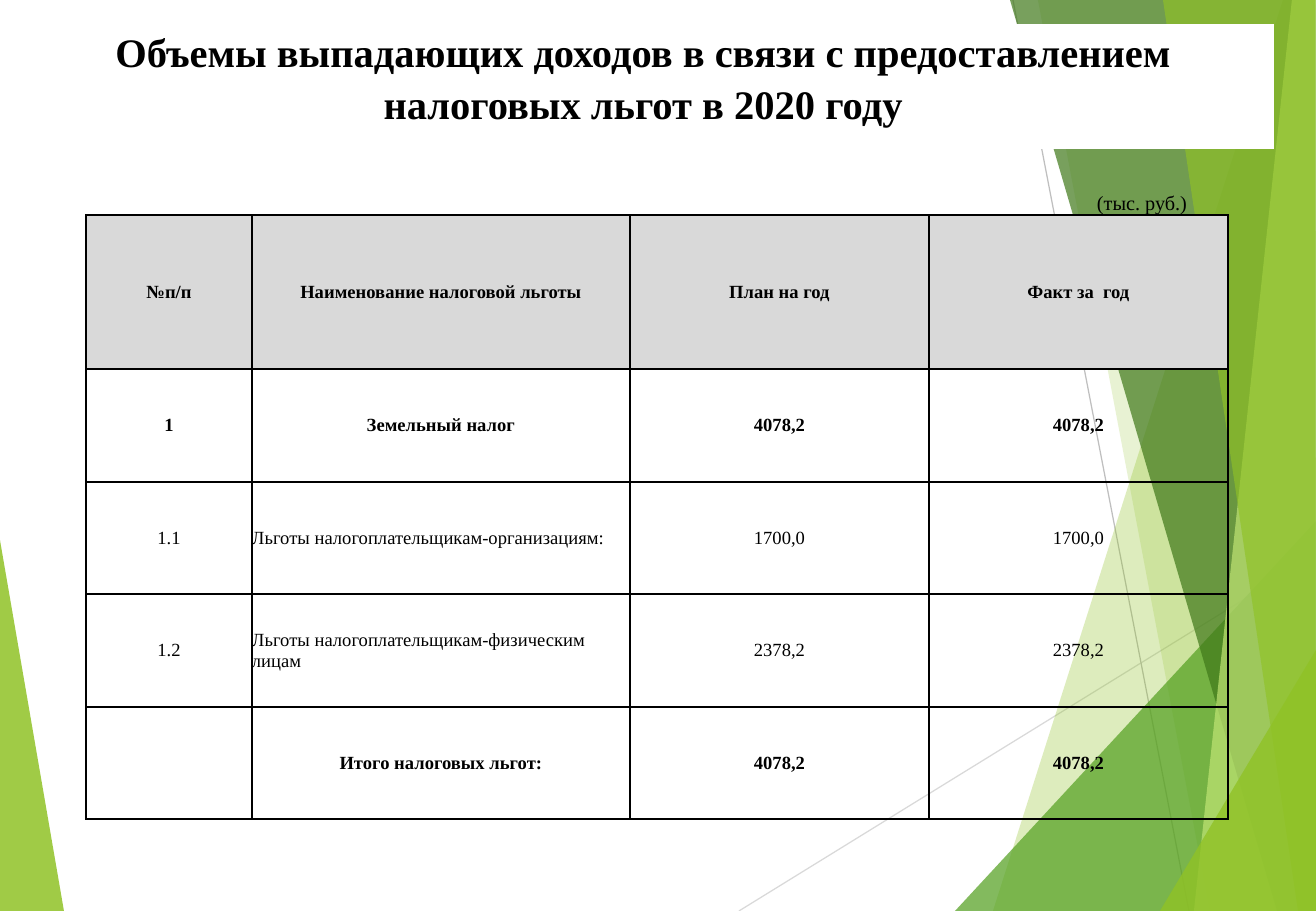
import pptx
import pptx.util
import pptx.dml.color
import pptx.enum.shapes
import pptx.enum.text
import pptx.oxml
import pptx.oxml.ns
import lxml.etree

PX = 7526
FONT = "Times New Roman"
ALIGN = pptx.enum.text.PP_ALIGN
ANCHOR = pptx.enum.text.MSO_ANCHOR


def color(value):
    return pptx.dml.color.RGBColor.from_string(value)


def write(frame, text, size=11, bold=False, align=ALIGN.CENTER, anchor=ANCHOR.TOP, wrap=True, spacing=1.0):
    frame.margin_left = frame.margin_right = frame.margin_top = frame.margin_bottom = 0
    frame.word_wrap = wrap
    frame.vertical_anchor = anchor
    paragraph = frame.paragraphs[0]
    paragraph.alignment = align
    paragraph.line_spacing = spacing
    run = paragraph.add_run()
    run.text = text
    run.font.name = FONT
    run.font.size = pptx.util.Pt(size)
    run.font.bold = bold
    run.font.color.rgb = color("000000")


presentation = pptx.Presentation()
presentation.slide_width = 1316 * PX
presentation.slide_height = 911 * PX
slide = presentation.slides.add_slide(presentation.slide_layouts[6])
shapes = slide.shapes

rays = [
    (739, 911, 1316, 555, "D9D9D9"),
    (1013, 0, 1189, 911, "BFBFBF"),
]
for left, top, right, bottom, line_color in rays:
    ray = shapes.add_connector(
        pptx.enum.shapes.MSO_CONNECTOR.STRAIGHT, left * PX, top * PX, right * PX, bottom * PX)
    ray.line.color.rgb = color(line_color)
    ray.line.width = pptx.util.Pt(0.75)
    lxml.etree.SubElement(ray._element.spPr, pptx.oxml.ns.qn("a:effectLst"))

facets = [
    ([(0, 540), (64, 911), (0, 911)], "90C226", 85),
    ([(1283, 0), (993, 911), (1316, 911), (1316, 0)], "90C226", 30),
    ([(1038, 0), (1210, 911), (1316, 911), (1316, 0)], "90C226", 20),
    ([(955, 911), (1316, 521), (1316, 911)], "54A021", 72),
    ([(1010, 0), (1277, 911), (1316, 911), (1316, 0)], "3F7819", 70),
    ([(1292, 0), (1194, 911), (1316, 911), (1316, 0)], "C0E474", 70),
    ([(1163, 0), (1298, 911), (1316, 911), (1315, 0)], "90C226", 65),
    ([(1160, 911), (1316, 650), (1316, 911)], "90C226", 80),
]
for points, fill_color, opacity in facets:
    builder = shapes.build_freeform(*points[0], scale=PX)
    builder.add_line_segments(points[1:], close=True)
    facet = builder.convert_to_shape()
    facet.shadow.inherit = False
    facet.fill.solid()
    facet.fill.fore_color.rgb = color(fill_color)
    facet.line.fill.background()
    tint = facet._element.spPr.find(".//" + pptx.oxml.ns.qn("a:srgbClr"))
    lxml.etree.SubElement(tint, pptx.oxml.ns.qn("a:alpha"), val=str(opacity * 1000))

title = shapes.add_shape(
    pptx.enum.shapes.MSO_SHAPE.RECTANGLE, 12 * PX, 24 * PX, 1262 * PX, 125 * PX)
title.shadow.inherit = False
title.fill.solid()
title.fill.fore_color.rgb = color("FFFFFF")
title.line.fill.background()
write(title.text_frame, "Объемы выпадающих доходов в связи с предоставлением налоговых льгот в 2020 году",
      size=24, bold=True, spacing=1.07)

rows = [
    ["№п/п", "Наименование налоговой льготы", "План на год", "Факт за  год"],
    ["1", "Земельный налог", "4078,2", "4078,2"],
    ["1.1", "Льготы налогоплательщикам-организациям:", "1700,0", "1700,0"],
    ["1.2", "Льготы налогоплательщикам-физическим лицам", "2378,2", "2378,2"],
    ["", "Итого налоговых льгот:", "4078,2", "4078,2"],
]
column_widths = [166, 378, 299, 299]
row_heights = [154, 113, 112, 113, 112]
detail_rows = (2, 3)
table = shapes.add_table(
    len(rows), len(column_widths), 86 * PX, 215 * PX,
    sum(column_widths) * PX, sum(row_heights) * PX).table
table.first_row = False
table.horz_banding = False
for column, width in zip(table.columns, column_widths):
    column.width = width * PX
for row, height in zip(table.rows, row_heights):
    row.height = height * PX

for row_index, texts in enumerate(rows):
    detail = row_index in detail_rows
    for column_index, text in enumerate(texts):
        cell = table.cell(row_index, column_index)
        properties = cell._tc.get_or_add_tcPr()
        for side in ("lnL", "lnR", "lnT", "lnB"):
            properties.append(pptx.oxml.parse_xml(
                f'<a:{side} {pptx.oxml.ns.nsdecls("a")} w="12700"><a:solidFill>'
                f'<a:srgbClr val="000000"/></a:solidFill></a:{side}>'))
        if row_index == 0:
            cell.fill.solid()
            cell.fill.fore_color.rgb = color("D9D9D9")
        else:
            cell.fill.background()
        cell.margin_left = cell.margin_right = cell.margin_top = cell.margin_bottom = 0
        cell.vertical_anchor = ANCHOR.MIDDLE
        if text:
            align = ALIGN.LEFT if detail and column_index == 1 else ALIGN.CENTER
            paragraph = cell.text_frame.paragraphs[0]
            paragraph.alignment = align
            run = paragraph.add_run()
            run.text = text
            run.font.name = FONT
            run.font.size = pptx.util.Pt(11)
            run.font.bold = not detail
            run.font.color.rgb = color("000000")

unit = shapes.add_textbox(1097 * PX, 190 * PX, 164 * PX, 27 * PX)
write(unit.text_frame, "(тыс. руб.)", size=12, align=ALIGN.LEFT, wrap=False)

presentation.save("out.pptx")
